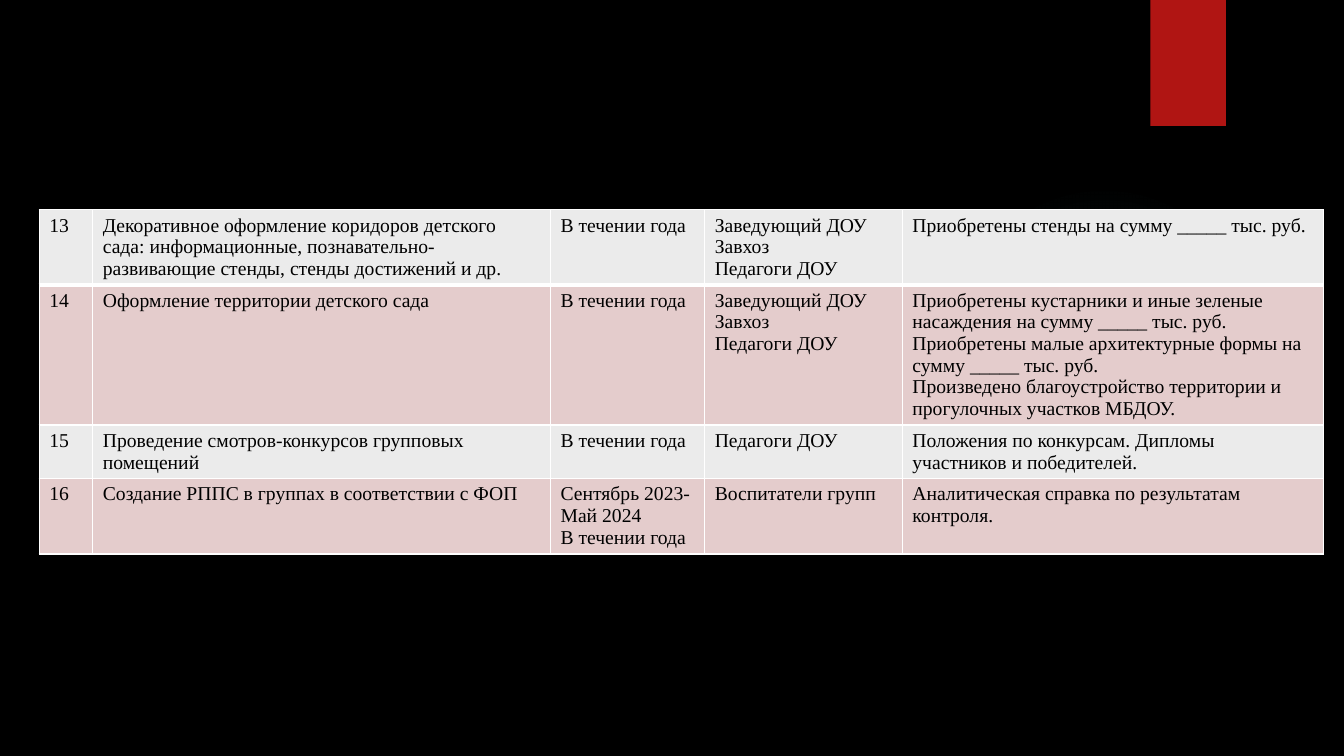
from dataclasses import dataclass

from lxml import etree
from pptx import Presentation
from pptx.dml.color import RGBColor
from pptx.enum.shapes import MSO_SHAPE
from pptx.oxml import parse_xml
from pptx.oxml.ns import nsdecls, qn
from pptx.util import Inches, Pt

ELLIPSE, RECTANGLE = MSO_SHAPE.OVAL, MSO_SHAPE.RECTANGLE


@dataclass(frozen=True)
class Theme:
    background: str = "000000"
    glow: str = "50B9C1"
    ribbon: str = "B01513"
    bands: tuple = ("EBEBEB", "E4CCCC")
    border: str = "FFFFFF"
    text: str = "000000"
    font: str = "Times New Roman"
    size: int = 14


THEME = Theme()
COLUMNS = (0.53, 4.54, 1.53, 1.96, 4.18)
ROWS = (0.74, 1.39, 0.53, 0.75)
STAFF = "Заведующий ДОУ\nЗавхоз\nПедагоги ДОУ"
ALL_YEAR = "В течении года"
PLAN = (
    ("13",
     "Декоративное оформление коридоров детского сада: информационные, "
     "познавательно- развивающие стенды, стенды достижений и др.",
     ALL_YEAR, STAFF, "Приобретены стенды на сумму _____ тыс. руб."),
    ("14", "Оформление территории детского сада", ALL_YEAR, STAFF,
     "Приобретены кустарники и иные зеленые насаждения на сумму _____ тыс. руб.\n"
     "Приобретены малые архитектурные формы на сумму _____ тыс. руб.\n"
     "Произведено благоустройство территории и прогулочных участков МБДОУ."),
    ("15", "Проведение смотров-конкурсов групповых помещений", ALL_YEAR,
     "Педагоги ДОУ", "Положения по конкурсам. Дипломы участников и победителей."),
    ("16", "Создание РППС в группах в соответствии с ФОП",
     "Сентябрь 2023- Май 2024\n" + ALL_YEAR, "Воспитатели групп",
     "Аналитическая справка по результатам контроля."),
)


def rgb(color):
    return RGBColor.from_string(color)


def add_plain_shape(slide, kind, box):
    sp = slide.shapes.add_shape(kind, *map(Inches, box))
    sp.shadow.inherit = False
    sp.line.fill.background()
    return sp


def add_glow(slide, box):
    sp = add_plain_shape(slide, ELLIPSE, box)
    sp.fill.background()
    stops = "".join(
        f'<a:gs pos="{pos * 1000}"><a:srgbClr val="{THEME.glow}">'
        f'<a:alpha val="{alpha * 1000}"/></a:srgbClr></a:gs>'
        for pos, alpha in ((0, 7), (36, 6), (69, 0)))
    gradient = parse_xml(
        f'<a:gradFill {nsdecls("a")}><a:gsLst>{stops}</a:gsLst><a:path path="circle">'
        '<a:fillToRect l="50000" t="50000" r="50000" b="50000"/></a:path></a:gradFill>')
    props = sp.element.spPr
    props.replace(props.find(qn("a:noFill")), gradient)


def add_ribbon(slide, box):
    sp = add_plain_shape(slide, RECTANGLE, box)
    sp.fill.solid()
    sp.fill.fore_color.rgb = rgb(THEME.ribbon)
    effects = sp.element.spPr.find(qn("a:effectLst"))
    effects.append(parse_xml(
        f'<a:outerShdw {nsdecls("a")} blurRad="{Pt(3)}" dist="{Pt(2)}" dir="5400000">'
        '<a:srgbClr val="000000"><a:alpha val="45000"/></a:srgbClr></a:outerShdw>'))


def set_borders(cell, top, bottom):
    props = cell._tc.get_or_add_tcPr()
    widths = {"a:lnL": 1, "a:lnR": 1, "a:lnT": top, "a:lnB": bottom}
    for i, (side, width) in enumerate(widths.items()):
        ln = etree.Element(qn(side), w=str(Pt(width)))
        fill = etree.SubElement(ln, qn("a:solidFill"))
        etree.SubElement(fill, qn("a:srgbClr"), val=THEME.border)
        props.insert(i, ln)


def fill_cell(cell, text, band):
    cell.fill.solid()
    cell.fill.fore_color.rgb = rgb(band)
    tf = cell.text_frame
    for i, line in enumerate(text.split("\n")):
        p = tf.add_paragraph() if i else tf.paragraphs[0]
        r = p.add_run()
        r.text = line
        r.font.name = THEME.font
        r.font.size = Pt(THEME.size)
        r.font.bold = False
        r.font.color.rgb = rgb(THEME.text)


def add_plan_table(slide, left, top):
    box = map(Inches, (left, top, sum(COLUMNS), sum(ROWS)))
    table = slide.shapes.add_table(len(ROWS), len(COLUMNS), *box).table
    for column, width in zip(table.columns, COLUMNS):
        column.width = Inches(width)
    for i, (row, height, texts) in enumerate(zip(table.rows, ROWS, PLAN)):
        row.height = Inches(height)
        for cell, text in zip(row.cells, texts):
            fill_cell(cell, text, THEME.bands[i % 2])
            # A thick rule parts the first row from the rest
            set_borders(cell, top=3 if i == 1 else 1, bottom=3 if i == 0 else 1)


def main():
    prs = Presentation()
    prs.slide_width, prs.slide_height = Inches(13.33), Inches(7.5)
    slide = prs.slides.add_slide(prs.slide_layouts[6])
    slide.background.fill.solid()
    slide.background.fill.fore_color.rgb = rgb(THEME.background)

    # Backdrop
    add_glow(slide, (9.41, 1.83, 3.08, 3.08))
    add_ribbon(slide, (11.41, 0, 0.75, 1.25))

    # Work plan
    add_plan_table(slide, 0.39, 2.08)
    prs.save("out.pptx")


if __name__ == "__main__":
    main()
